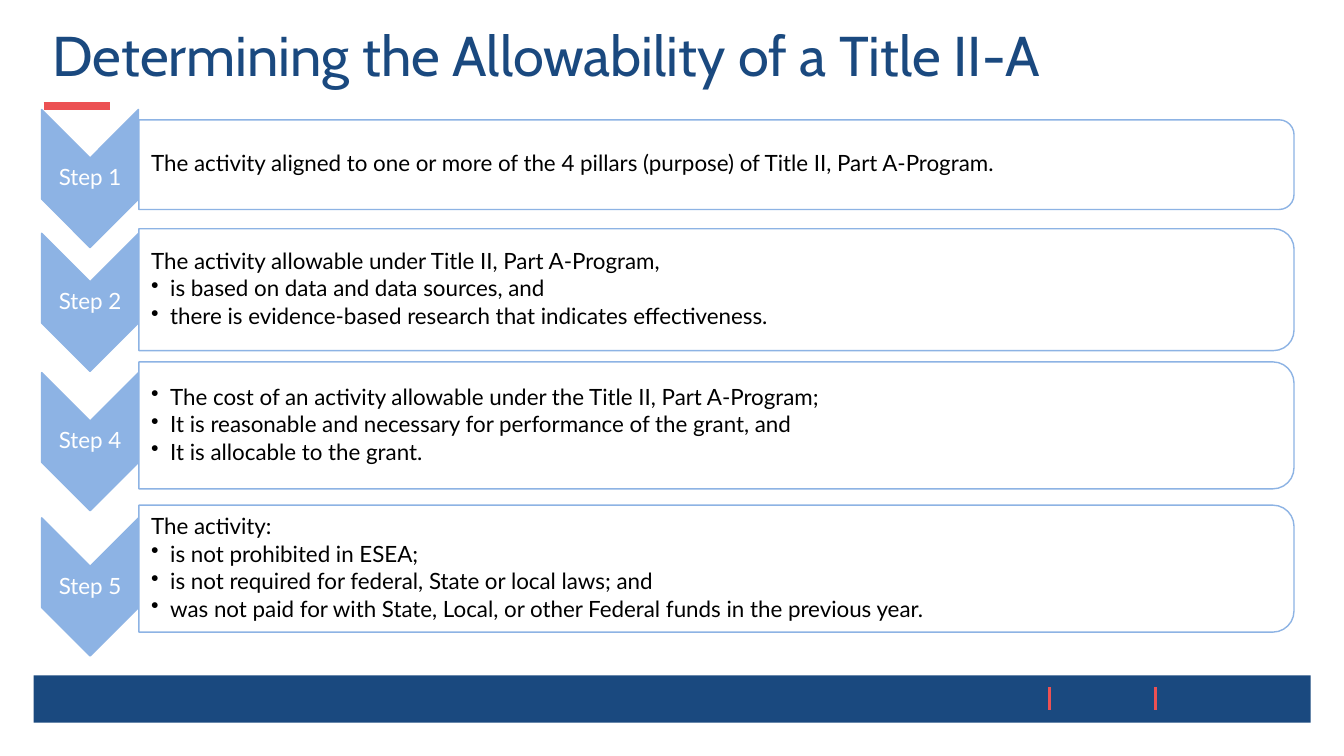
import pptx
import pptx.util
import pptx.dml.color
import pptx.enum.shapes
import pptx.enum.text
from lxml import etree
from pptx.oxml.ns import qn

Cm = pptx.util.Cm
Pt = pptx.util.Pt
RGBColor = pptx.dml.color.RGBColor
MSO_SHAPE = pptx.enum.shapes.MSO_SHAPE
PP_ALIGN = pptx.enum.text.PP_ALIGN

NAVY = RGBColor(0x1A, 0x49, 0x7F)
RED = RGBColor(0xEC, 0x51, 0x53)
BLUE = RGBColor(0x8D, 0xB3, 0xE4)
WHITE = RGBColor(0xFF, 0xFF, 0xFF)
BLACK = RGBColor(0, 0, 0)

BULLET = "•"
CHEVRON_X, CHEVRON_W, CHEVRON_H = 1.05, 2.44, 3.48
LABEL_H = 1.04
PANEL_X, PANEL_W = 3.5, 29.11

# step label, chevron centre y, panel centre y, panel height, lines
STEPS = [
    ("Step 1", 4.5, 4.15, 2.26, [
        "The activity aligned to one or more of the 4 pillars (purpose) of Title II, Part A-Program."]),
    ("Step 2", 7.62, 7.3, 3.07, [
        "The activity allowable under Title II, Part A-Program,",
        "• is based on data and data sources, and",
        "• there is evidence-based research that indicates effectiveness."]),
    ("Step 4", 11.13, 10.72, 3.2, [
        "• The cost of an activity allowable under the Title II, Part A-Program;",
        "• It is reasonable and necessary for performance of the grant, and",
        "• It is allocable to the grant."]),
    ("Step 5", 14.79, 14.33, 3.2, [
        "The activity:",
        "• is not prohibited in ESEA;",
        "• is not required for federal, State or local laws; and",
        "• was not paid for with State, Local, or other Federal funds in the previous year."]),
]


def write(tf, lines, font="Lato", size=16, color=BLACK, align=PP_ALIGN.LEFT,
          after=0, hang=0):
    """Fill a text frame; lines that open with a bullet sign become list items."""
    tf.word_wrap = True
    tf.auto_size = pptx.enum.text.MSO_AUTO_SIZE.NONE
    tf.vertical_anchor = pptx.enum.text.MSO_ANCHOR.MIDDLE
    for i, line in enumerate(lines):
        p = tf.paragraphs[0] if i == 0 else tf.add_paragraph()
        p.alignment = align
        p.line_spacing = 0.9
        p.space_before = Pt(0)
        p.space_after = Pt(after)
        if line.startswith(BULLET):
            pPr = p._p.get_or_add_pPr()
            pPr.set("marL", str(Cm(hang)))
            pPr.set("indent", str(-Cm(hang)))
            etree.SubElement(pPr, qn("a:buChar")).set("char", BULLET)
        r = p.add_run()
        r.text = line.removeprefix(BULLET).strip()
        r.font.name = font
        r.font.size = Pt(size)
        r.font.color.rgb = color


class Deck:
    def __init__(self):
        self.prs = pptx.Presentation()
        self.prs.slide_width, self.prs.slide_height = Cm(33.87), Cm(19.05)
        self.s = self.prs.slides.add_slide(self.prs.slide_layouts[5])

    def title(self, text, x, y, w, h):
        sp = self.s.shapes.title
        sp.left, sp.top, sp.width, sp.height = Cm(x), Cm(y), Cm(w), Cm(h)
        write(sp.text_frame, [text], font="Cabin", size=40, color=NAVY)

    def shape(self, kind, x, y, w, h, fill, line=None, rotation=0, opacity=100):
        sp = self.s.shapes.add_shape(kind, Cm(x), Cm(y), Cm(w), Cm(h))
        sp.shadow.inherit = False
        sp.rotation = rotation
        sp.fill.solid()
        sp.fill.fore_color.rgb = fill
        if opacity < 100:
            color = sp._element.spPr.find(qn("a:solidFill"))[0]
            etree.SubElement(color, qn("a:alpha")).set("val", str(opacity * 1000))
        if line is None:
            sp.line.fill.background()
        else:
            sp.line.color.rgb = line
            sp.line.width = Pt(1)

    def turned(self, kind, x, middle, w, h, fill, **style):
        """Shape turned a quarter clockwise that shows w wide and h high."""
        self.shape(kind, x + (w - h) / 2, middle - w / 2, h, w, fill,
                   line=BLUE, rotation=90, **style)

    def line(self, x1, y1, x2, y2, width):
        c = self.s.shapes.add_connector(pptx.enum.shapes.MSO_CONNECTOR.STRAIGHT,
                                        Cm(x1), Cm(y1), Cm(x2), Cm(y2))
        c.line.color.rgb = RED
        c.line.width = Pt(width)
        etree.SubElement(c._element.spPr, qn("a:effectLst"))

    def text(self, lines, x, middle, w, h, inset=0.03, **style):
        tf = self.s.shapes.add_textbox(Cm(x), Cm(middle - h / 2), Cm(w), Cm(h)).text_frame
        tf.margin_left = Cm(inset)
        tf.margin_right = tf.margin_top = tf.margin_bottom = Cm(0.03)
        write(tf, lines, **style)

    def step(self, label, chevron_mid, panel_mid, panel_h, lines):
        self.turned(MSO_SHAPE.CHEVRON, CHEVRON_X, chevron_mid, CHEVRON_W, CHEVRON_H, BLUE)
        self.text([label], CHEVRON_X, chevron_mid, CHEVRON_W, LABEL_H,
                  color=WHITE, align=PP_ALIGN.CENTER, after=5.6)
        self.turned(MSO_SHAPE.ROUND_2_SAME_RECTANGLE, PANEL_X, panel_mid,
                    PANEL_W, panel_h, WHITE, opacity=90)
        self.text(lines, PANEL_X, panel_mid, PANEL_W - 0.15, panel_h - 0.3,
                  inset=0.31, after=2.4, hang=0.48)


def main():
    deck = Deck()
    deck.line(1.1, 2.67, 2.78, 2.67, 6)
    deck.shape(MSO_SHAPE.RECTANGLE, 0.85, 17.02, 32.18, 1.19, NAVY)
    for x in (29.13, 26.44):
        deck.line(x, 17.32, x, 17.88, 2.25)
    deck.title("Determining the Allowability of a Title II-A", 1.07, 0.53, 29.21, 1.9)
    for step in STEPS:
        deck.step(*step)
    deck.prs.save("out.pptx")


if __name__ == "__main__":
    main()
